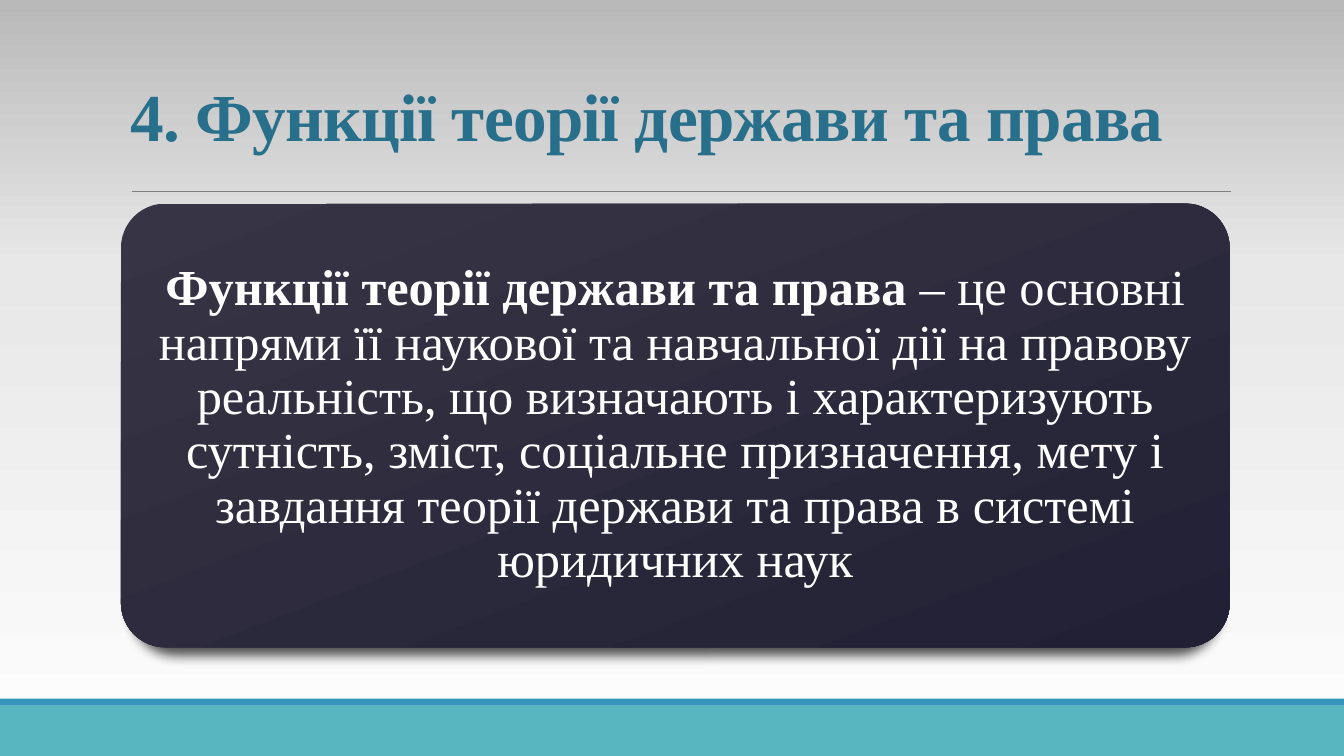
from copy import deepcopy
from dataclasses import dataclass

from lxml import etree
from pptx import Presentation
from pptx import util as u
from pptx.dml.color import RGBColor
from pptx.enum import shapes, text
from pptx.oxml import ns, parse_xml


@dataclass
class Theme:
    font: str = "Times New Roman"
    title_size: int = 48
    body_size: int = 36
    title: str = "276F8B"
    body: str = "FFFFFF"
    rule: str = "808080"
    band: str = "58B6C0"
    stripe: str = "3494BA"
    backdrop: tuple = ((0, "FEFEFE"), (65, "E7E7E7"), (100, "B9B9B9"))
    card: tuple = ((0, "373545"), (100, "222034"))


theme = Theme()


def set_gradient(fill, owner, stops, angle):
    """Fill with (percent, colour) stops; the angle runs counter-clockwise."""
    fill.gradient()
    fill.gradient_angle = angle
    stop_list = owner.xpath(".//a:gsLst")[0]
    while len(stop_list) < len(stops):
        stop_list.append(deepcopy(stop_list[0]))
    for stop, (percent, color) in zip(fill.gradient_stops, stops):
        stop.position = percent / 100
        stop.color.rgb = RGBColor.from_string(color)


def add_run(p, content, size, color, bold):
    r = p.add_run()
    r.text = content
    r.font.name = theme.font
    r.font.size = u.Pt(size)
    r.font.bold = bold
    r.font.color.rgb = RGBColor.from_string(color)
    return r


prs = Presentation()
prs.slide_width, prs.slide_height = u.Pt(960), u.Pt(540)
s = prs.slides.add_slide(prs.slide_layouts[6])

# Background
set_gradient(s.background.fill, s._element, theme.backdrop, 90)

# Bottom bands
for top, height, color in ((504, 36, theme.band), (499, 5, theme.stripe)):
    sp = s.shapes.add_shape(shapes.MSO_SHAPE.RECTANGLE,
                            u.Pt(0), u.Pt(top), u.Pt(960), u.Pt(height))
    sp.shadow.inherit = False
    sp.fill.solid()
    sp.fill.fore_color.rgb = RGBColor.from_string(color)
    sp.line.fill.background()

# Rule under the title
rule = s.shapes.add_connector(shapes.MSO_CONNECTOR.STRAIGHT,
                              u.Pt(94.3), u.Pt(136.6), u.Pt(879), u.Pt(136.6))
rule.line.color.rgb = RGBColor.from_string(theme.rule)
rule.line.width = u.Pt(0.5)
etree.SubElement(rule._element.spPr, ns.qn("a:effectLst"))

# Title
tf = s.shapes.add_textbox(u.Pt(86.4), u.Pt(32.4), u.Pt(792), u.Pt(82)).text_frame
tf.word_wrap = True
tf.vertical_anchor = text.MSO_ANCHOR.BOTTOM
p = tf.paragraphs[0]
p.line_spacing = 0.85
r = add_run(p, "4.\u00a0Функції теорії держави та права".replace("\u00a0", " "),
            theme.title_size, theme.title, True)
r.font._element.set("spc", "-50")

# Definition card
sp = s.shapes.add_shape(shapes.MSO_SHAPE.ROUNDED_RECTANGLE,
                        u.Pt(86.4), u.Pt(145.4), u.Pt(792), u.Pt(317))
sp.adjustments[0] = 0.1
set_gradient(sp.fill, sp._element, theme.card, 291)
sp.line.fill.background()
sp.shadow.inherit = False
sp._element.spPr.find(ns.qn("a:effectLst")).append(parse_xml(
    f'<a:outerShdw {ns.nsdecls("a")} blurRad="{u.Pt(9)}" dist="{u.Pt(9)}" '
    'dir="5400000" sx="98000" sy="98000" algn="ctr" rotWithShape="0"><a:srgbClr val="000000">'
    '<a:alpha val="70000"/></a:srgbClr></a:outerShdw>'))

tf = sp.text_frame
tf.word_wrap = True
tf.vertical_anchor = text.MSO_ANCHOR.MIDDLE
tf.margin_left = tf.margin_right = tf.margin_top = tf.margin_bottom = u.Pt(3.6)
p = tf.paragraphs[0]
p.alignment = text.PP_ALIGN.CENTER
p.line_spacing = 0.9
add_run(p, "Функції теорії держави та права ", theme.body_size, theme.body, True)
add_run(p, "– це основні напрями її наукової та навчальної дії на правову реальність, "
           "що визначають і характеризують сутність, зміст, соціальне призначення, "
           "мету і завдання теорії держави та права в системі юридичних наук",
        theme.body_size, theme.body, False)

prs.save("out.pptx")
